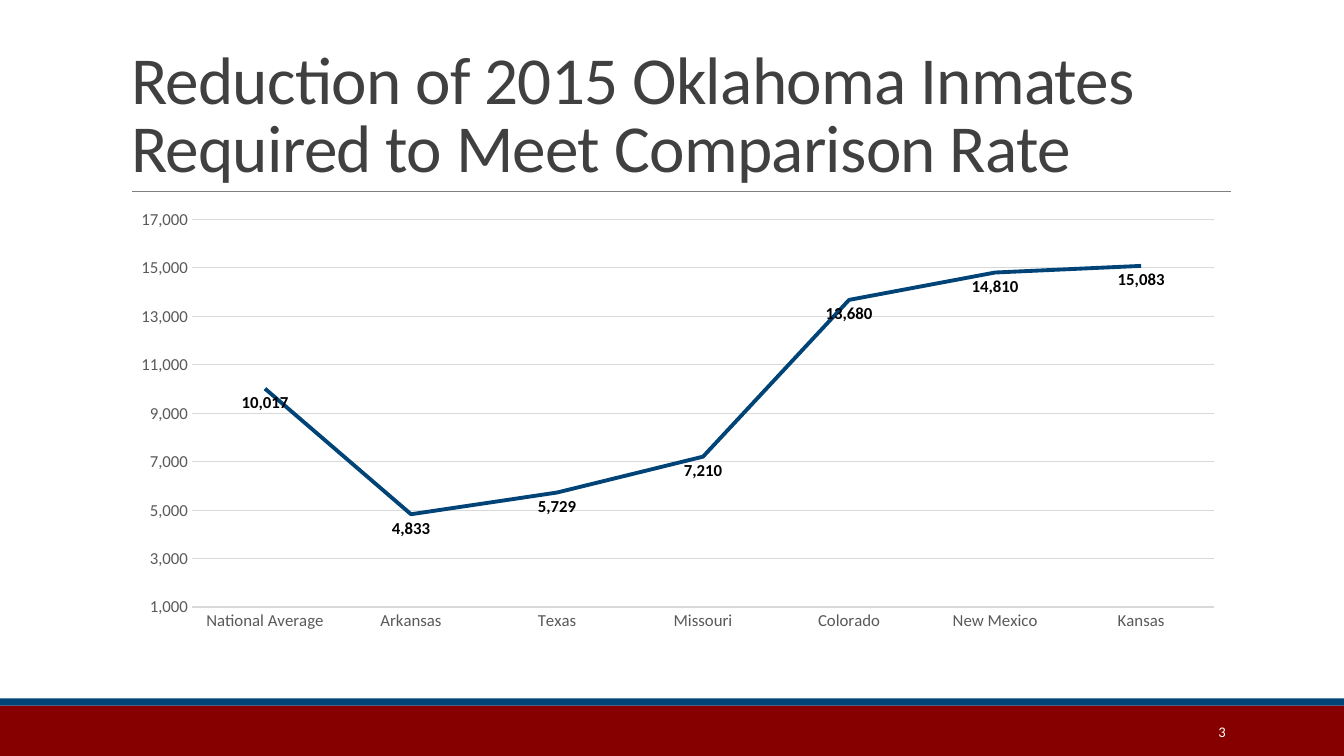
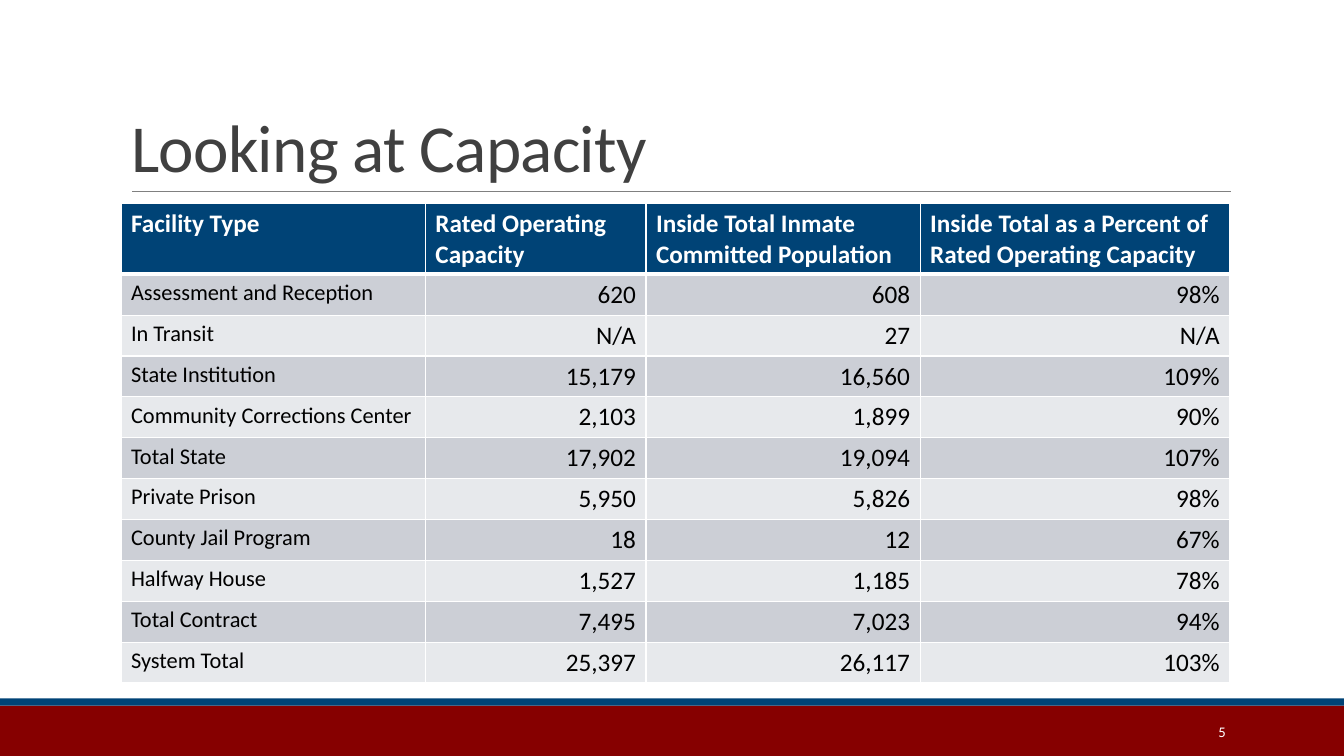
from lxml import etree
from pptx import Presentation
from pptx.chart.data import CategoryChartData
from pptx.dml.color import RGBColor
from pptx.enum.chart import XL_CHART_TYPE, XL_LABEL_POSITION, XL_MARKER_STYLE, XL_TICK_MARK
from pptx.enum.shapes import MSO_CONNECTOR, MSO_SHAPE
from pptx.enum.text import MSO_ANCHOR, MSO_AUTO_SIZE, PP_ALIGN
from pptx.oxml import parse_xml
from pptx.oxml.ns import nsdecls, qn
from pptx.util import Cm, Pt

LINE_CHART = XL_CHART_TYPE.LINE
LABEL_BELOW = XL_LABEL_POSITION.BELOW
NO_MARKER = XL_MARKER_STYLE.NONE
NO_TICK = XL_TICK_MARK.NONE
STRAIGHT = MSO_CONNECTOR.STRAIGHT
RECTANGLE = MSO_SHAPE.RECTANGLE
BOTTOM, MIDDLE = MSO_ANCHOR.BOTTOM, MSO_ANCHOR.MIDDLE
NO_AUTOFIT = MSO_AUTO_SIZE.NONE
LEFT, RIGHT = PP_ALIGN.LEFT, PP_ALIGN.RIGHT

FONT = "Calibri"
NAVY, MAROON = "004376", "860000"
WHITE, BLACK = "FFFFFF", "000000"
TITLE_GREY, RULE_GREY = "404040", "808080"
AXIS_GREY, GRID_GREY = "595959", "D9D9D9"
ROW_FILLS = ["E7E9EC", "CCCFD6"]

SLIDE_WIDTH, SLIDE_HEIGHT = 33.87, 19.05
CONTENT_LEFT, CONTENT_TOP, CONTENT_WIDTH = 3.05, 5.13, 27.94
TITLE_ONLY_LAYOUT = 5

INMATE_REDUCTIONS = {
    "National Average": 10017,
    "Arkansas": 4833,
    "Texas": 5729,
    "Missouri": 7210,
    "Colorado": 13680,
    "New Mexico": 14810,
    "Kansas": 15083,
}

CAPACITY_COLUMN_WIDTHS = [7.67, 5.56, 6.91, 7.8]
CAPACITY_ROWS = [
    ["Facility Type", "Rated Operating Capacity", "Inside Total Inmate Committed Population",
     "Inside Total as a Percent of Rated Operating Capacity"],
    ["Assessment and Reception", "620", "608", "98%"],
    ["In Transit", "N/A", "27", "N/A"],
    ["State Institution", "15,179", "16,560", "109%"],
    ["Community Corrections Center", "2,103", "1,899", "90%"],
    ["Total State", "17,902", "19,094", "107%"],
    ["Private Prison", "5,950", "5,826", "98%"],
    ["County Jail Program", "18", "12", "67%"],
    ["Halfway House", "1,527", "1,185", "78%"],
    ["Total Contract", "7,495", "7,023", "94%"],
    ["System Total", "25,397", "26,117", "103%"],
]


def colour(hex_string):
    return RGBColor.from_string(hex_string)


def set_font(font, size, hex_string, bold=False):
    font.name = FONT
    font.size = Pt(size)
    font.bold = bold
    font.color.rgb = colour(hex_string)


def add_band(page, top, height, hex_string):
    band = page.shapes.add_shape(RECTANGLE, 0, Cm(top), Cm(SLIDE_WIDTH), Cm(height))
    band.shadow.inherit = False
    band.fill.solid()
    band.fill.fore_color.rgb = colour(hex_string)
    band.line.fill.background()


def add_title_rule(page):
    rule = page.shapes.add_connector(STRAIGHT, Cm(3.33), Cm(4.83), Cm(31.01), Cm(4.83))
    rule.line.color.rgb = colour(RULE_GREY)
    rule.line.width = Pt(0.5)
    etree.SubElement(rule._element.spPr, qn("a:effectLst"))


def set_title(page, text):
    title = page.shapes.title
    title.left, title.top = Cm(CONTENT_LEFT), Cm(0.79)
    title.width, title.height = Cm(CONTENT_WIDTH), Cm(4.04)
    frame = title.text_frame
    frame.text = text
    frame.word_wrap = True
    frame.auto_size = NO_AUTOFIT
    frame.vertical_anchor = BOTTOM
    para = frame.paragraphs[0]
    para.alignment = LEFT
    para.line_spacing = 0.85
    set_font(para.font, 48, TITLE_GREY)
    para.runs[0]._r.get_or_add_rPr().set("spc", "-50")


def add_page_number(page, number):
    box = page.shapes.add_textbox(Cm(27.51), Cm(17.93), Cm(3.63), Cm(1.02))
    frame = box.text_frame
    frame.word_wrap = True
    frame.vertical_anchor = MIDDLE
    para = frame.paragraphs[0]
    para.text = str(number)
    para.alignment = RIGHT
    set_font(para.font, 10.5, WHITE)


def add_page(deck, title, number):
    page = deck.slides.add_slide(deck.slide_layouts[TITLE_ONLY_LAYOUT])
    add_band(page, 17.78, 1.27, MAROON)
    add_band(page, 17.6, 0.18, NAVY)
    add_title_rule(page)
    set_title(page, title)
    add_page_number(page, number)
    return page


def place_plot(chart, x, y, width, height):
    plot_area = chart._chartSpace.chart.plotArea
    for layout in plot_area.findall(qn("c:layout")):
        plot_area.remove(layout)
    plot_area.insert(0, parse_xml(
        f'<c:layout {nsdecls("c")}><c:manualLayout><c:layoutTarget val="inner"/>'
        '<c:xMode val="edge"/><c:yMode val="edge"/>'
        f'<c:x val="{x}"/><c:y val="{y}"/><c:w val="{width}"/><c:h val="{height}"/>'
        '</c:manualLayout></c:layout>'))


def format_axes(chart):
    for axis in (chart.category_axis, chart.value_axis):
        axis.major_tick_mark = axis.minor_tick_mark = NO_TICK
        set_font(axis.tick_labels.font, 12, AXIS_GREY)
    category_line = chart.category_axis.format.line
    category_line.color.rgb = colour(GRID_GREY)
    category_line.width = Pt(1)
    values = chart.value_axis
    values.minimum_scale, values.maximum_scale, values.major_unit = 1000, 17000, 2000
    values.tick_labels.number_format = "#,##0"
    values.tick_labels.number_format_is_linked = False
    values.format.line.fill.background()
    values.has_major_gridlines = True
    grid_line = values.major_gridlines.format.line
    grid_line.color.rgb = colour(GRID_GREY)
    grid_line.width = Pt(0.75)


def format_series(series):
    series.smooth = False
    series.marker.style = NO_MARKER
    series.format.line.color.rgb = colour(NAVY)
    series.format.line.width = Pt(2.75)
    labels = series.data_labels
    labels.show_value = True
    labels.position = LABEL_BELOW
    labels.number_format = "#,##0"
    labels.number_format_is_linked = False
    set_font(labels.font, 12, BLACK, bold=True)


def add_line_chart(page, points):
    chart_data = CategoryChartData(number_format="#,##0")
    chart_data.categories = list(points)
    chart_data.add_series("Series 1", list(points.values()))
    chart = page.shapes.add_chart(LINE_CHART, Cm(CONTENT_LEFT), Cm(CONTENT_TOP),
                                  Cm(CONTENT_WIDTH), Cm(11.18), chart_data).chart
    chart.has_title = False
    chart.has_legend = False
    set_font(chart.font, 10, BLACK)
    chart.plots[0].vary_by_categories = False
    place_plot(chart, 0.064, 0.036, 0.922, 0.874)
    format_axes(chart)
    format_series(chart.plots[0].series[0])


def set_borders(cell, top, bottom):
    properties = cell._tc.get_or_add_tcPr()
    for side, points in (("L", 1), ("R", 1), ("T", top), ("B", bottom)):
        properties.append(parse_xml(
            f'<a:ln{side} {nsdecls("a")} w="{Pt(points)}"><a:solidFill>'
            f'<a:srgbClr val="{WHITE}"/></a:solidFill></a:ln{side}>'))


def fill_cell(cell, text, row, column):
    is_header = row == 0
    is_number = not is_header and column > 0
    set_borders(cell, top=3 if row == 1 else 1, bottom=3 if is_header else 1)
    cell.fill.solid()
    cell.fill.fore_color.rgb = colour(NAVY if is_header else ROW_FILLS[row % 2])
    para = cell.text_frame.paragraphs[0]
    para.text = text
    para.alignment = RIGHT if is_number else LEFT
    set_font(para.font, 18 if is_header or is_number else 16,
             WHITE if is_header else BLACK, bold=is_header)


def add_table(page, rows, column_widths, header_height, row_height):
    height = header_height + row_height * (len(rows) - 1)
    table = page.shapes.add_table(len(rows), len(column_widths), Cm(CONTENT_LEFT),
                                  Cm(CONTENT_TOP), Cm(CONTENT_WIDTH), Cm(height)).table
    for column, width in zip(table.columns, column_widths):
        column.width = Cm(width)
    for row, texts in enumerate(rows):
        table.rows[row].height = Cm(row_height if row else header_height)
        for column, text in enumerate(texts):
            fill_cell(table.cell(row, column), text, row, column)


def main():
    deck = Presentation()
    deck.slide_width, deck.slide_height = Cm(SLIDE_WIDTH), Cm(SLIDE_HEIGHT)
    reduction_page = add_page(
        deck, "Reduction of 2015 Oklahoma Inmates Required to Meet Comparison Rate", 3)
    add_line_chart(reduction_page, INMATE_REDUCTIONS)
    capacity_page = add_page(deck, "Looking at Capacity", 5)
    add_table(capacity_page, CAPACITY_ROWS, CAPACITY_COLUMN_WIDTHS, 1.78, 1.03)
    deck.save("out.pptx")


if __name__ == "__main__":
    main()
